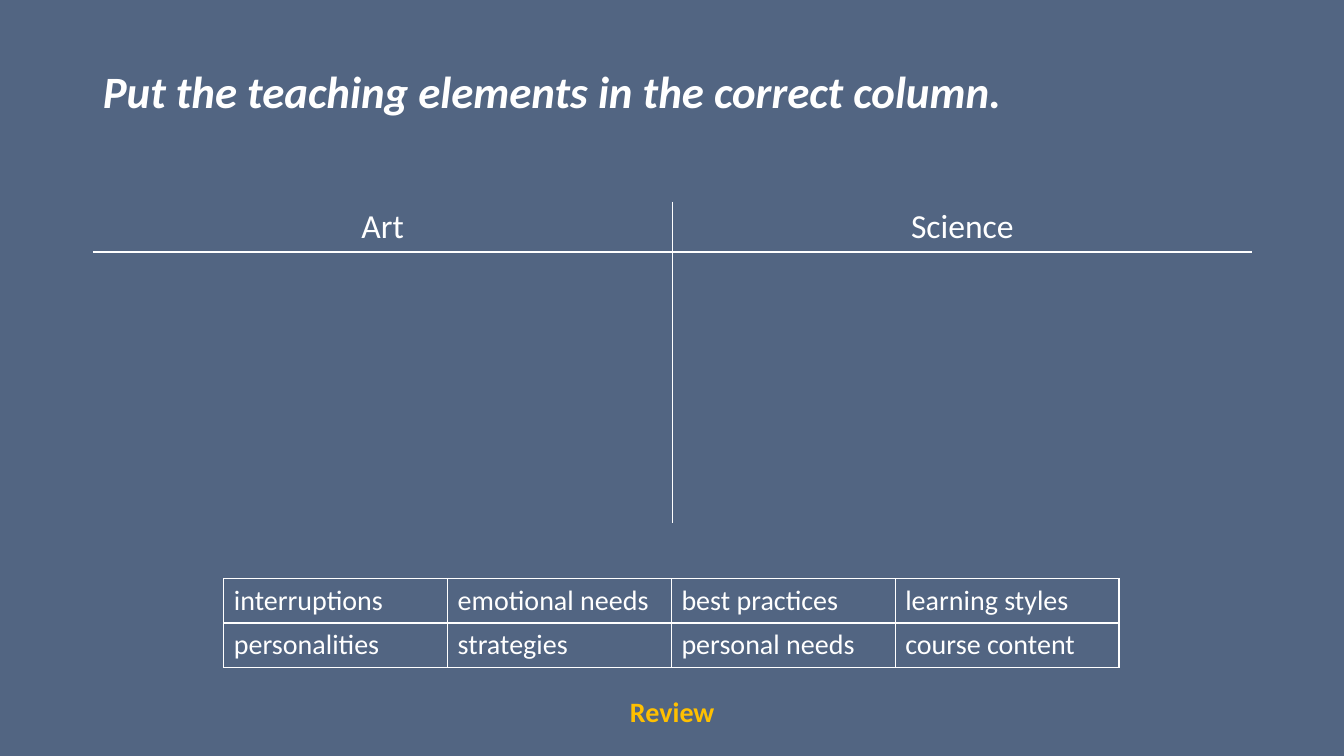
from lxml import etree
from pptx import Presentation
from pptx.dml.color import RGBColor
from pptx.enum.text import MSO_ANCHOR, PP_ALIGN
from pptx.oxml.ns import qn
from pptx.util import Inches, Pt

TOP = MSO_ANCHOR.TOP
LEFT, CENTER = PP_ALIGN.LEFT, PP_ALIGN.CENTER
TITLE_ONLY = 5
FONT = "Calibri"
COLORS = {"background": "526582", "text": "FFFFFF", "review": "FFC000"}
SIDES = "LRTB"

COLUMN_HEADS = [["Art", "Science"], ["", ""]]
ELEMENTS = [
    ["interruptions", "emotional needs", "best practices", "learning styles"],
    ["personalities", "strategies", "personal needs", "course content"],
]


def rgb(name):
    return RGBColor.from_string(COLORS[name])


def write(frame, text, size, color="text", bold=False, italic=False,
          align=LEFT, spacing=None):
    paragraph = frame.paragraphs[0]
    paragraph.alignment = align
    paragraph.line_spacing = spacing
    paragraph.font.size = Pt(size)
    if not text:
        return
    run = paragraph.add_run()
    run.text = text
    font = run.font
    font.name, font.size = FONT, Pt(size)
    font.bold, font.italic = bold, italic
    font.color.rgb = rgb(color)


def set_borders(cell, visible):
    """Draw the sides named in visible and hide the others."""
    properties = cell._tc.get_or_add_tcPr()
    for position, side in enumerate(SIDES):
        line = etree.Element(qn(f"a:ln{side}"), w=str(Pt(1)))
        if side in visible:
            fill = etree.SubElement(line, qn("a:solidFill"))
            etree.SubElement(fill, qn("a:srgbClr"), val=COLORS["text"])
        else:
            etree.SubElement(line, qn("a:noFill"))
        properties.insert(position, line)


def inner_sides(row, column, rows, columns):
    """Name the sides that a cell shares with a neighbour."""
    shared = {"L": column > 0, "R": column < columns - 1,
              "T": row > 0, "B": row < rows - 1}
    return [side for side in SIDES if shared[side]]


def add_grid(slide, texts, left, top, column_width, row_heights, size,
             align=LEFT, framed=True):
    rows, columns = len(texts), len(texts[0])
    table = slide.shapes.add_table(
        rows, columns, Inches(left), Inches(top),
        Inches(column_width * columns), Inches(sum(row_heights))).table
    table.first_row = table.horz_banding = False
    for column in table.columns:
        column.width = Inches(column_width)
    for r, height in enumerate(row_heights):
        table.rows[r].height = Inches(height)
        for c, text in enumerate(texts[r]):
            cell = table.cell(r, c)
            cell.fill.background()
            set_borders(cell, SIDES if framed else inner_sides(r, c, rows, columns))
            write(cell.text_frame, text, size, align=align)


def add_title(slide, text):
    title = slide.shapes.title
    title.left, title.top = Inches(0.92), Inches(0.64)
    title.width, title.height = Inches(11.5), Inches(1.45)
    title.text_frame.vertical_anchor = TOP
    write(title.text_frame, text, 32, bold=True, italic=True, spacing=0.9)


def add_review_label(slide):
    label = slide.shapes.add_textbox(
        Inches(6.15), Inches(6.88), Inches(1.13), Inches(0.42))
    label.text_frame.word_wrap = True
    write(label.text_frame, "Review", 20, "review", bold=True, spacing=0.9)


def main():
    deck = Presentation()
    deck.slide_width, deck.slide_height = Inches(13.33), Inches(7.5)
    slide = deck.slides.add_slide(deck.slide_layouts[TITLE_ONLY])
    slide.background.fill.solid()
    slide.background.fill.fore_color.rgb = rgb("background")

    add_review_label(slide)
    add_title(slide, "Put the teaching elements in the correct column.")
    add_grid(slide, COLUMN_HEADS, 0.92, 2, 5.75, [0.5, 2.69], 24,
             align=CENTER, framed=False)
    add_grid(slide, ELEMENTS, 2.22, 5.74, 2.22, [0.44, 0.44], 20)
    deck.save("out.pptx")


if __name__ == "__main__":
    main()
